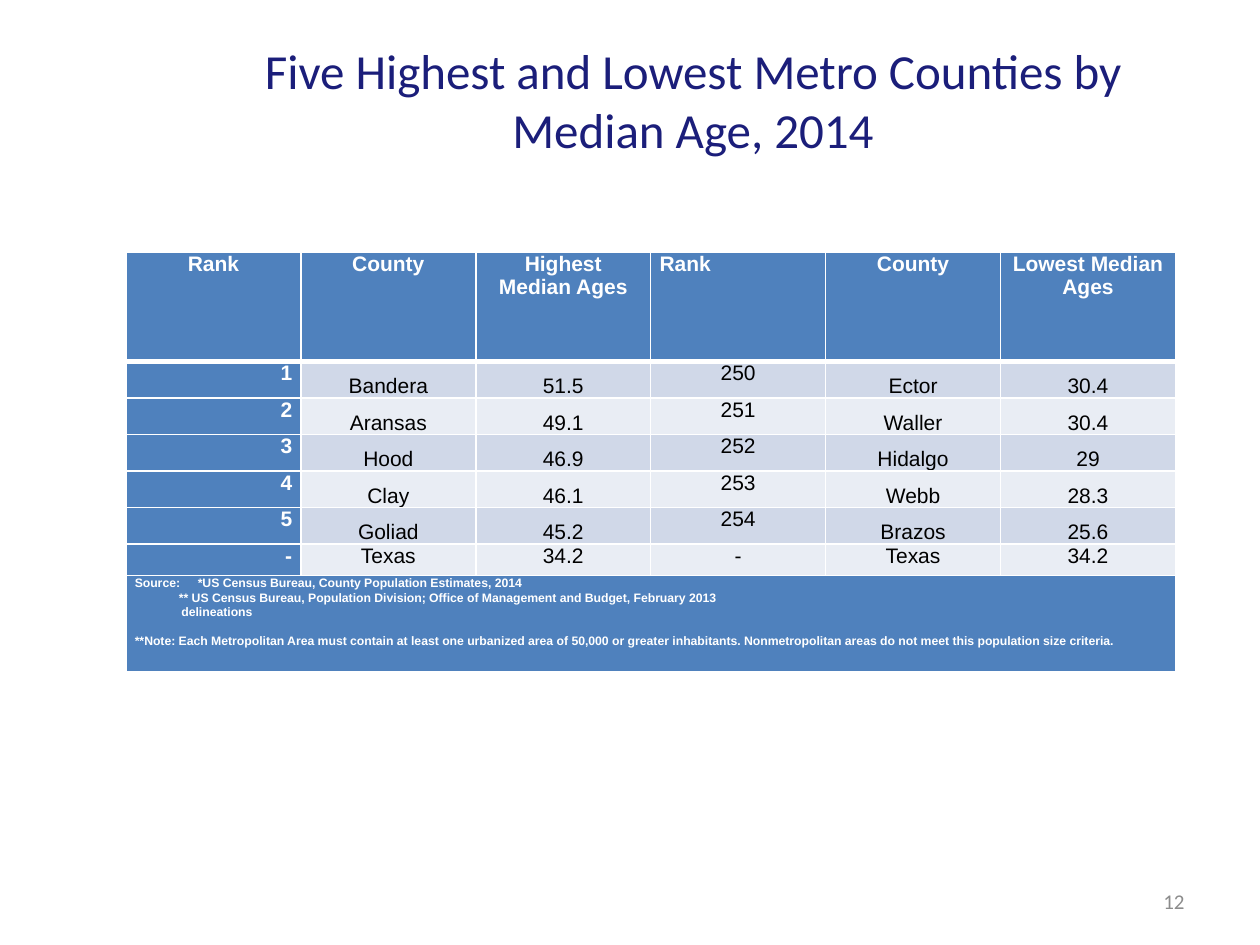
"""Build the slide that ranks metro counties by median age."""
import pptx
import pptx.dml.color
import pptx.enum.text
import pptx.oxml
import pptx.oxml.ns
import pptx.util

Inches, Pt = pptx.util.Inches, pptx.util.Pt
ALIGN, ANCHOR = pptx.enum.text.PP_ALIGN, pptx.enum.text.MSO_ANCHOR

TITLE = "Five Highest and Lowest Metro Counties by Median Age, 2014"
PAGE_NUMBER = "12"
HEADERS = [["Rank"], ["County"], ["Highest", "Median Ages"],
           ["Rank"], ["County"], ["Lowest Median Ages"]]
COUNTIES = [
    ("1", "Bandera", "51.5", "250", "Ector", "30.4"),
    ("2", "Aransas", "49.1", "251", "Waller", "30.4"),
    ("3", "Hood", "46.9", "252", "Hidalgo", "29"),
    ("4", "Clay", "46.1", "253", "Webb", "28.3"),
    ("5", "Goliad", "45.2", "254", "Brazos", "25.6"),
    ("-", "Texas", "34.2", "-", "Texas", "34.2"),
]
FOOTNOTES = [
    ("Source:\t*US Census Bureau, County Population Estimates, 2014", 0, 0, 1.07),
    ("** US Census Bureau, Population Division; Office of Management and Budget, "
     "February 2013", 0.35, 0, 1.07),
    ("delineations", 0.37, 0, 1.07),
    ("**Note: Each Metropolitan Area must contain at least one urbanized area of "
     "50,000 or greater inhabitants. Nonmetropolitan areas do not meet this "
     "population size criteria.", 0, 8.6, 1),
]
ROW_HEIGHTS = [0.87] + [0.29] * 5 + [0.25, 0.76]
COLUMN_WIDTH = 8.33 / len(HEADERS)
SOURCE_TAB = 0.44
BLUE, BANDS = "4F81BD", ("D0D8E8", "E9EDF4")
WHITE, BLACK, NAVY, GRAY = "FFFFFF", "000000", "1B1E7A", "8C8C8C"


def rgb(value):
    return pptx.dml.color.RGBColor.from_string(value)


def write(paragraph, text, size, color, align=ALIGN.LEFT, bold=False, font="Arial"):
    paragraph.alignment = align
    run = paragraph.add_run()
    run.text = text
    run.font.name, run.font.size, run.font.bold = font, Pt(size), bold
    run.font.color.rgb = rgb(color)


def paragraphs(frame, count):
    return [frame.paragraphs[0]] + [frame.add_paragraph() for _ in range(count - 1)]


def style_cell(cell, fill, row):
    cell.margin_left = cell.margin_right = Inches(0.07)
    cell.margin_top = cell.margin_bottom = 0
    cell.fill.solid()
    cell.fill.fore_color.rgb = rgb(fill)
    widths = {"L": 1, "R": 1, "T": 3 if row == 1 else 1, "B": 3 if row == 0 else 1}
    for index, (side, width) in enumerate(widths.items()):
        cell._tc.get_or_add_tcPr().insert(index, pptx.oxml.parse_xml(
            f'<a:ln{side} {pptx.oxml.ns.nsdecls("a")} w="{Pt(width)}"><a:solidFill>'
            f'<a:srgbClr val="{WHITE}"/></a:solidFill></a:ln{side}>'))


def fill_headers(table):
    for column, lines in enumerate(HEADERS):
        cell = table.cell(0, column)
        style_cell(cell, BLUE, 0)
        align = ALIGN.LEFT if column == 3 else ALIGN.CENTER
        for paragraph, line in zip(paragraphs(cell.text_frame, len(lines)), lines):
            write(paragraph, line, 12, WHITE, align, True)


def fill_counties(table):
    for row, county in enumerate(COUNTIES, 1):
        for column, text in enumerate(county):
            cell = table.cell(row, column)
            is_rank = column == 0
            style_cell(cell, BLUE if is_rank else BANDS[(row - 1) % 2], row)
            if column not in (0, 3) and row < len(COUNTIES):
                cell.vertical_anchor = ANCHOR.BOTTOM
            write(cell.text_frame.paragraphs[0], text, 12, WHITE if is_rank else BLACK,
                  ALIGN.RIGHT if is_rank else ALIGN.CENTER, is_rank)


def fill_footnotes(table):
    last = len(ROW_HEIGHTS) - 1
    for column in range(len(HEADERS)):
        style_cell(table.cell(last, column), BLUE, last)
    footer = table.cell(last, 0)
    footer.merge(table.cell(last, len(HEADERS) - 1))
    lines = paragraphs(footer.text_frame, len(FOOTNOTES))
    for paragraph, (text, indent, before, spacing) in zip(lines, FOOTNOTES):
        properties = paragraph._p.get_or_add_pPr()
        properties.set("marL", str(Inches(indent)))
        properties.set("indent", "0")
        if "\t" in text:
            properties.append(pptx.oxml.parse_xml(
                f'<a:tabLst {pptx.oxml.ns.nsdecls("a")}>'
                f'<a:tab pos="{Inches(SOURCE_TAB)}" algn="l"/></a:tabLst>'))
        paragraph.line_spacing = spacing
        if before:
            paragraph.space_before = Pt(before)
        write(paragraph, text, 7, WHITE, bold=True)


def main():
    deck = pptx.Presentation()
    deck.slide_width, deck.slide_height = Inches(10), Inches(7.5)
    slide = deck.slides.add_slide(deck.slide_layouts[5])

    title = slide.shapes.title
    title.left, title.top = Inches(1.75), Inches(0.25)
    title.width, title.height = Inches(7.5), Inches(1.08)
    title.text_frame.vertical_anchor = ANCHOR.MIDDLE
    write(title.text_frame.paragraphs[0], TITLE, 28, NAVY, ALIGN.CENTER, font="Calibri")

    table = slide.shapes.add_table(
        len(ROW_HEIGHTS), len(HEADERS), Inches(1), Inches(2),
        Inches(COLUMN_WIDTH * len(HEADERS)), Inches(sum(ROW_HEIGHTS))).table
    table.horz_banding = False
    for column in table.columns:
        column.width = Inches(COLUMN_WIDTH)
    for row, height in zip(table.rows, ROW_HEIGHTS):
        row.height = Inches(height)
    fill_headers(table)
    fill_counties(table)
    fill_footnotes(table)

    page = slide.shapes.add_textbox(
        Inches(7.17), Inches(6.95), Inches(2.33), Inches(0.4)).text_frame
    page.word_wrap = True
    page.vertical_anchor = ANCHOR.MIDDLE
    write(page.paragraphs[0], PAGE_NUMBER, 12, GRAY, ALIGN.RIGHT, font="Calibri")

    deck.save("out.pptx")


if __name__ == "__main__":
    main()
